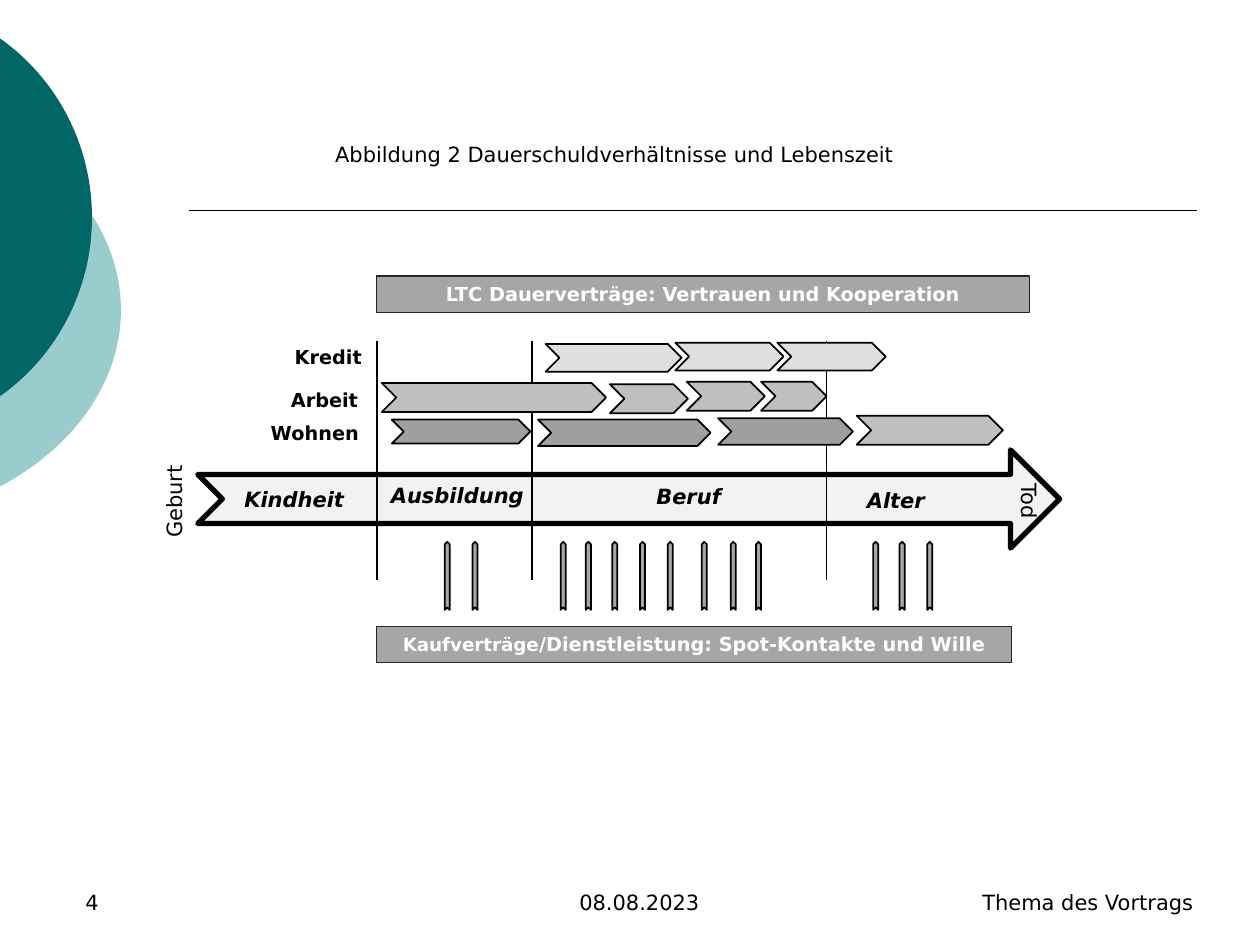
from dataclasses import dataclass

from lxml.etree import SubElement
from pptx import Presentation
from pptx.dml.color import RGBColor
from pptx.enum.shapes import MSO_CONNECTOR as Connector, MSO_SHAPE as Shape
from pptx.enum.text import MSO_ANCHOR as Anchor, PP_ALIGN as Align
from pptx.oxml.ns import qn
from pptx.util import Inches, Pt


@dataclass(frozen=True)
class Theme:
    font: str = "DejaVu Sans"
    body: float = 12
    label: float = 11
    small: float = 10.5
    black: str = "000000"
    white: str = "FFFFFF"
    teal: str = "006666"
    pale_teal: str = "99CCCC"
    arrow: str = "F2F2F2"
    banner: str = "A6A6A6"
    banner_line: str = "262626"
    credit: str = "DFDFDF"
    work: str = "BFBFBF"
    home: str = "9F9F9F"


THEME = Theme()
WIDTH, HEIGHT = 10, 7.5

TITLE = ("Abbildung 2 Dauerschuldverhältnisse und Lebenszeit", (2.56, 1.07, 5.61, 0.3))
CIRCLES = [
    ((-3.54, 0.75, 4.5, 3.42), THEME.pale_teal),
    ((-2.65, 0, 3.38, 3.45), THEME.teal),
]
FOOTERS = [
    ("4", 0.58, 2.33, Align.LEFT),
    ("08.08.2023", 3.49, 3.17, Align.CENTER),
    ("Thema des Vortrags", 7.24, 2.33, Align.RIGHT),
]
LIFE_ARROW = (1.57, 3.57, 6.84, 0.78)
LIFE_ENDS = [
    ("Geburt", (0.93, 3.83, 0.9, 0.3), 270),
    ("Tod", (7.85, 3.86, 0.7, 0.24), 90),
]
PHASES = [
    ("Kindheit", (1.84, 3.81, 1.09, 0.3)),
    ("Ausbildung", (2.99, 3.78, 1.28, 0.3)),
    ("Beruf", (4.54, 3.79, 1.85, 0.3)),
    ("Alter", (6.74, 3.82, 0.74, 0.3)),
]
DIVIDERS, DIVIDER_TOP, DIVIDER_BOTTOM = (2.99, 4.22, 6.56), 2.71, 4.6
CONTRACT_LABELS = [
    ("Kredit", (2.24, 2.69, 0.77, 0.29)),
    ("Arbeit", (2.21, 3.03, 0.75, 0.29)),
    ("Wohnen", (2.05, 3.29, 0.99, 0.29)),
]
CONTRACTS = [
    (THEME.credit, [(4.33, 2.73, 1.08, 0.22), (5.36, 2.72, 0.86, 0.22),
                    (6.17, 2.72, 0.86, 0.22)]),
    (THEME.work, [(3.03, 3.04, 1.78, 0.23), (4.84, 3.05, 0.62, 0.23),
                  (5.45, 3.03, 0.62, 0.23), (6.04, 3.03, 0.52, 0.23),
                  (6.8, 3.3, 1.16, 0.23)]),
    (THEME.home, [(3.11, 3.33, 1.1, 0.19), (4.27, 3.33, 1.37, 0.21),
                  (5.7, 3.32, 1.07, 0.21)]),
]
SPOT_CENTRES = (3.55, 3.77, 4.47, 4.67, 4.88, 5.1, 5.32, 5.59, 5.82, 6.02, 6.95, 7.16, 7.38)
SPOT_MIDDLE, SPOT_LENGTH, SPOT_THICKNESS = 4.57, 0.54, 0.04
BANNERS = [
    ([("LTC Dauerverträge: Vertrauen und Kooperation", THEME.label)],
     (2.99, 2.19, 5.18, 0.29)),
    ([("Kaufverträge", THEME.small),
      ("/Dienstleistung: Spot-Kontakte und Wille", THEME.label)],
     (2.99, 4.97, 5.04, 0.29)),
]


def inches(box):
    return [Inches(length) for length in box]


def colour(value):
    return RGBColor.from_string(value)


def write(shape, runs, ink=THEME.black, align=Align.LEFT, anchor=Anchor.TOP,
          bold=False, italic=False):
    frame = shape.text_frame
    frame.word_wrap = True
    frame.vertical_anchor = anchor
    frame.margin_left = frame.margin_right = Inches(0.1)
    frame.margin_top = frame.margin_bottom = Inches(0.05)
    paragraph = frame.paragraphs[0]
    paragraph.alignment = align
    for text, size in runs:
        run = paragraph.add_run()
        run.text = text
        font = run.font
        font.name, font.size = THEME.font, Pt(size)
        font.bold, font.italic = bold, italic
        font.color.rgb = colour(ink)


def add_text(slide, text, box, size=THEME.body, rotation=0, **style):
    shape = slide.shapes.add_textbox(*inches(box))
    shape.rotation = rotation
    write(shape, [(text, size)], **style)


def add_shape(slide, kind, box, fill, line=THEME.black, weight=1, rotation=0):
    shape = slide.shapes.add_shape(kind, *inches(box))
    shape.shadow.inherit = False
    shape.rotation = rotation
    shape.fill.solid()
    shape.fill.fore_color.rgb = colour(fill)
    if line:
        shape.line.color.rgb = colour(line)
        shape.line.width = Pt(weight)
    else:
        shape.line.fill.background()
    return shape


def add_line(slide, *ends):
    line = slide.shapes.add_connector(Connector.STRAIGHT, *inches(ends))
    line.line.color.rgb = colour(THEME.black)
    line.line.width = Pt(1)
    SubElement(line._element.spPr, qn("a:effectLst"))


def add_frame(slide):
    for box, fill in CIRCLES:
        add_shape(slide, Shape.OVAL, box, fill, line=None)
    add_line(slide, 0.15 * WIDTH, 1.67, 0.95 * WIDTH, 1.67)
    for text, left, width, align in FOOTERS:
        add_text(slide, text, (left, 6.81, width, 0.5), align=align, anchor=Anchor.BOTTOM)
    text, box = TITLE
    title = slide.shapes.title
    title.left, title.top, title.width, title.height = inches(box)
    write(title, [(text, THEME.body)])


def add_life(slide):
    add_shape(slide, Shape.NOTCHED_RIGHT_ARROW, LIFE_ARROW, THEME.arrow, weight=3)
    for text, box, rotation in LIFE_ENDS:
        add_text(slide, text, box, rotation=rotation, align=Align.CENTER)
    for text, box in PHASES:
        add_text(slide, text, box, align=Align.CENTER if text != "Kindheit" else Align.LEFT,
                 bold=True, italic=True)
    for x in DIVIDERS:
        add_line(slide, x, DIVIDER_TOP, x, DIVIDER_BOTTOM)


def add_contracts(slide):
    for text, box in CONTRACT_LABELS:
        add_text(slide, text, box, THEME.label, bold=True)
    for fill, boxes in CONTRACTS:
        for box in boxes:
            add_shape(slide, Shape.CHEVRON, box, fill)
    for centre in SPOT_CENTRES:
        box = (centre - SPOT_LENGTH / 2, SPOT_MIDDLE - SPOT_THICKNESS / 2,
               SPOT_LENGTH, SPOT_THICKNESS)
        add_shape(slide, Shape.CHEVRON, box, THEME.banner, rotation=270)
    for runs, box in BANNERS:
        banner = add_shape(slide, Shape.RECTANGLE, box, THEME.banner, THEME.banner_line, 0.75)
        write(banner, runs, THEME.white, Align.CENTER, bold=True)


def main():
    presentation = Presentation()
    presentation.slide_width, presentation.slide_height = inches((WIDTH, HEIGHT))
    slide = presentation.slides.add_slide(presentation.slide_layouts[5])
    add_frame(slide)
    add_life(slide)
    add_contracts(slide)
    presentation.save("out.pptx")


if __name__ == "__main__":
    main()
